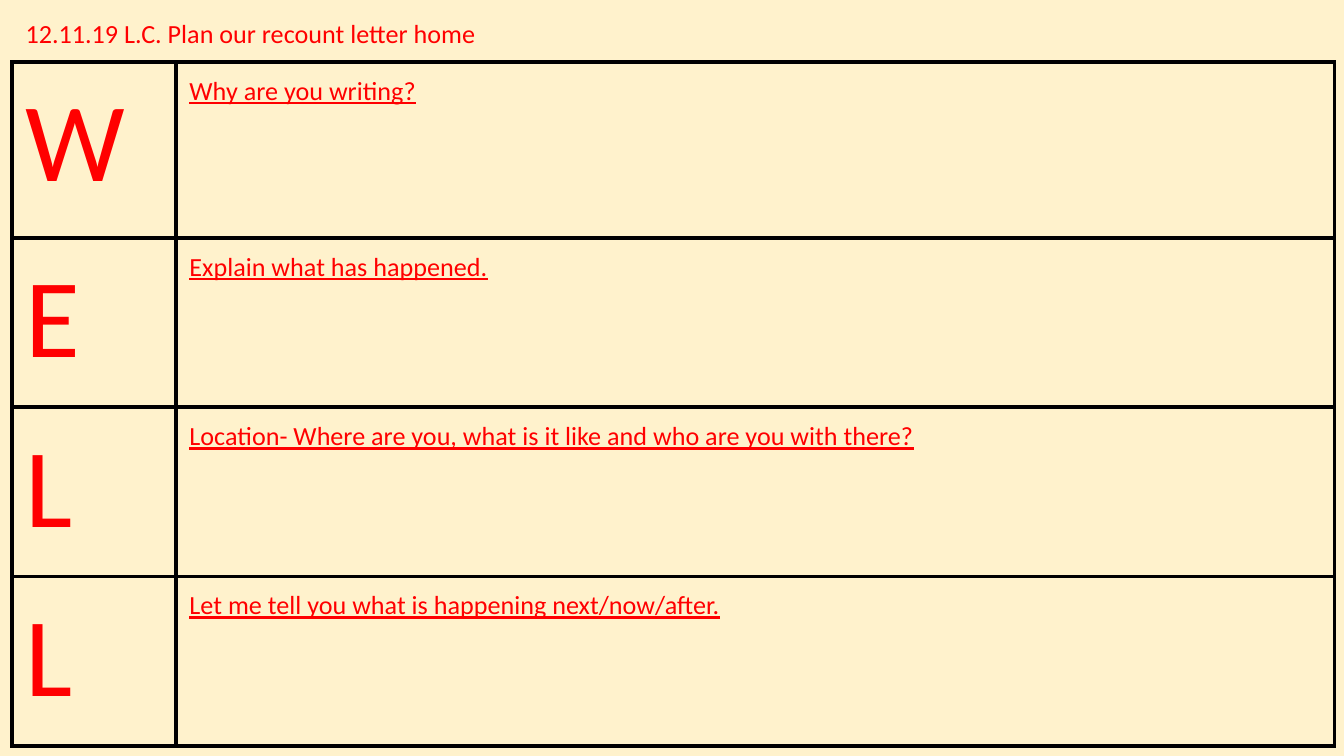
from lxml import etree
from pptx import Presentation
from pptx.dml.color import RGBColor
from pptx.enum.text import MSO_ANCHOR, MSO_AUTO_SIZE, PP_ALIGN
from pptx.oxml.ns import qn
from pptx.util import Inches, Pt

TOP, LEFT, NO_FIT = MSO_ANCHOR.TOP, PP_ALIGN.LEFT, MSO_AUTO_SIZE.NONE

THEME = {
    "font": "Calibri",
    "background": RGBColor.from_string("FFF2CC"),
    "text": RGBColor.from_string("FF0000"),
    "border": "000000",
    "border_width": Pt(2.25),
    "body_size": Pt(14),
    "letter_size": Pt(60),
}
INSET = Inches(0.1)


def add_text(p, text, size, underline=False):
    p.alignment = LEFT
    r = p.add_run()
    r.text = text
    r.font.name = THEME["font"]
    r.font.size = size
    r.font.bold = False
    r.font.underline = underline
    r.font.color.rgb = THEME["text"]


def add_borders(cell):
    tc_pr = cell._tc.get_or_add_tcPr()
    for i, side in enumerate(("lnL", "lnR", "lnT", "lnB")):
        ln = etree.Element(qn(f"a:{side}"), w=str(THEME["border_width"]))
        fill = etree.SubElement(ln, qn("a:solidFill"))
        etree.SubElement(fill, qn("a:srgbClr"), val=THEME["border"])
        tc_pr.insert(i, ln)


# Widescreen 16:9 slide
prs = Presentation()
prs.slide_width = Inches(10)
prs.slide_height = Inches(10 * 9 / 16)
s = prs.slides.add_slide(prs.slide_layouts[5])
s.background.fill.solid()
s.background.fill.fore_color.rgb = THEME["background"]

# Date and learning challenge
title = s.shapes.title
title.left, title.top = Inches(0.09), Inches(0.03)
title.width, title.height = Inches(9.91), Inches(0.37)
tf = title.text_frame
tf.auto_size = NO_FIT
tf.word_wrap = True
tf.vertical_anchor = TOP
tf.margin_left = tf.margin_right = tf.margin_top = tf.margin_bottom = INSET
add_text(tf.paragraphs[0], "12.11.19 L.C. Plan our recount letter home", THEME["body_size"])

# WELL planning grid
prompts = [
    ("W", "Why are you writing?"),
    ("E", "Explain what has happened."),
    ("L", "Location- Where are you, what is it like and who are you with there?"),
    ("L", "Let me tell you what is happening next/now/after."),
]
col_widths = [1.22, 8.62]
row_heights = [1.31] + [1.26] * 3
table = s.shapes.add_table(
    len(prompts), len(col_widths), Inches(0.09), Inches(0.46),
    Inches(sum(col_widths)), Inches(sum(row_heights)),
).table
table.first_row = table.horz_banding = False
for col, width in zip(table.columns, col_widths):
    col.width = Inches(width)

for row, height, (letter, prompt) in zip(table.rows, row_heights, prompts):
    row.height = Inches(height)
    letter_cell, prompt_cell = row.cells
    add_text(letter_cell.text_frame.paragraphs[0], letter, THEME["letter_size"])
    add_text(prompt_cell.text_frame.paragraphs[0], prompt, THEME["body_size"], underline=True)
    for cell in (letter_cell, prompt_cell):
        cell.margin_left = cell.margin_right = INSET
        cell.margin_top = cell.margin_bottom = INSET
        cell.vertical_anchor = TOP
        cell.fill.background()
        add_borders(cell)

prs.save("out.pptx")
